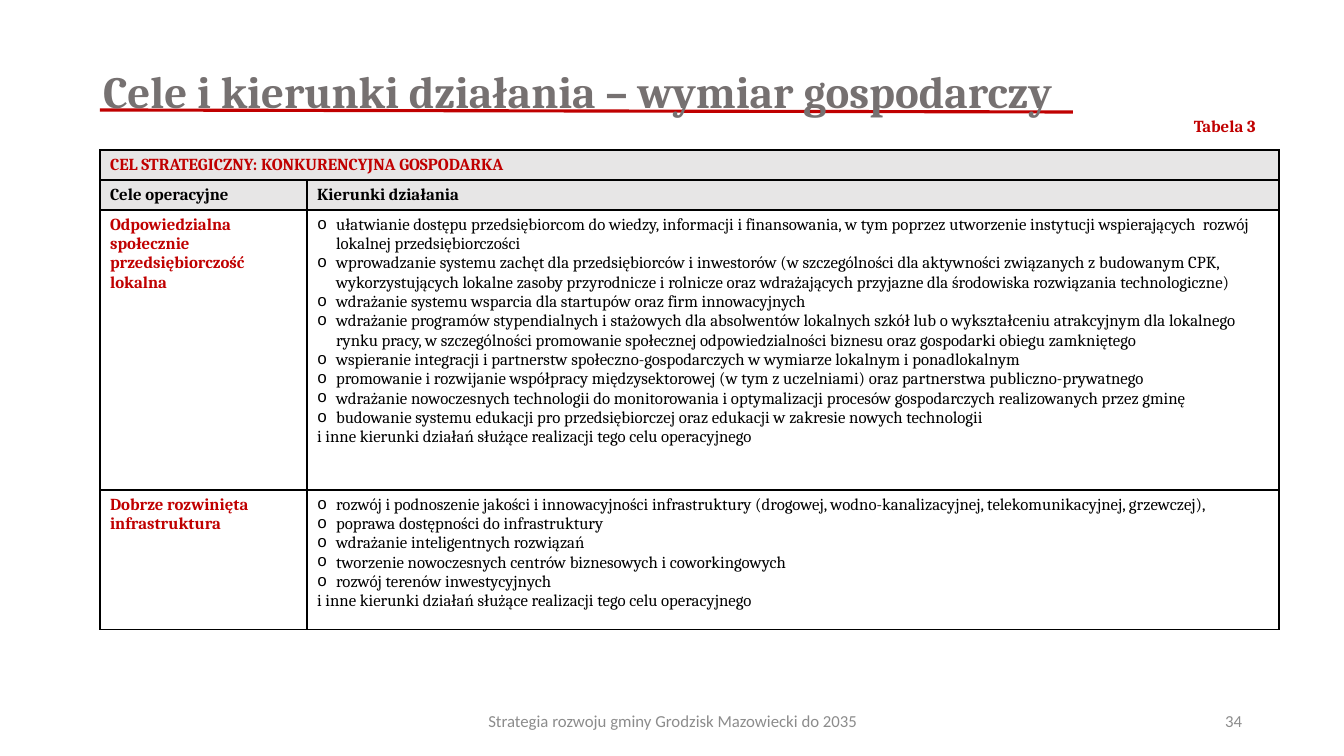
"""Build the slide with the table of economic goals and directions of action."""
from dataclasses import dataclass

from lxml import etree
from pptx import Presentation
from pptx.dml.color import RGBColor
from pptx.enum.shapes import MSO_CONNECTOR as Connector
from pptx.enum.text import MSO_ANCHOR as Anchor, PP_ALIGN as Align
from pptx.oxml import parse_xml
from pptx.oxml.ns import nsdecls, qn
from pptx.util import Pt

PX = 914400 / 100.8


@dataclass(frozen=True)
class Theme:
    red: str = "C00000"
    black: str = "000000"
    title_gray: str = "767171"
    footer_gray: str = "8C8C8C"
    header_fill: str = "E7E6E6"
    serif: str = "Cambria"
    sans: str = "Calibri"
    title_size: int = 32
    text_size: int = 12
    rule_width: float = 2.25
    border_width: int = 1


theme = Theme()


def px(*lengths):
    return [round(length * PX) for length in lengths]


def add_text(para, text, color, bold=False, size=theme.text_size, face=theme.serif):
    span = para.add_run()
    span.text = text
    span.font.name = face
    span.font.size = Pt(size)
    span.font.bold = bold
    span.font.color.rgb = RGBColor.from_string(color)


deck = Presentation()
deck.slide_width, deck.slide_height = px(1344, 756)
page = deck.slides.add_slide(deck.slide_layouts[5])

title = page.shapes.title
title.left, title.top, title.width, title.height = px(93, 28, 1159, 105)
title.text_frame.word_wrap = True
title.text_frame.vertical_anchor = Anchor.MIDDLE
title_para = title.text_frame.paragraphs[0]
title_para.alignment = Align.LEFT
title_para.line_spacing = Pt(52.8)
add_text(title_para, "Cele i kierunki działania – wymiar gospodarczy",
         theme.title_gray, True, theme.title_size)

rule = page.shapes.add_connector(Connector.STRAIGHT, *px(100, 110, 1073, 112))
rule.line.color.rgb = RGBColor.from_string(theme.red)
rule.line.width = Pt(theme.rule_width)
etree.SubElement(rule._element.spPr, qn("a:effectLst"))
page.shapes._spTree.insert(2, rule._element)

closing = "i inne kierunki działań służące realizacji tego celu operacyjnego"
goals = [
    ("Odpowiedzialna społecznie przedsiębiorczość lokalna", [
        "ułatwianie dostępu przedsiębiorcom do wiedzy, informacji i finansowania, w tym poprzez "
        "utworzenie instytucji wspierających  rozwój lokalnej przedsiębiorczości",
        "wprowadzanie systemu zachęt dla przedsiębiorców i inwestorów (w szczególności dla "
        "aktywności związanych z budowanym CPK, wykorzystujących lokalne zasoby przyrodnicze "
        "i rolnicze oraz wdrażających przyjazne dla środowiska rozwiązania technologiczne)",
        "wdrażanie systemu wsparcia dla startupów oraz firm innowacyjnych",
        "wdrażanie programów stypendialnych i stażowych dla absolwentów lokalnych szkół lub "
        "o wykształceniu atrakcyjnym dla lokalnego rynku pracy, w szczególności promowanie "
        "społecznej odpowiedzialności biznesu oraz gospodarki obiegu zamkniętego",
        "wspieranie integracji i partnerstw społeczno-gospodarczych w wymiarze lokalnym "
        "i ponadlokalnym",
        "promowanie i rozwijanie współpracy międzysektorowej (w tym z uczelniami) oraz "
        "partnerstwa publiczno-prywatnego",
        "wdrażanie nowoczesnych technologii do monitorowania i optymalizacji procesów "
        "gospodarczych realizowanych przez gminę",
        "budowanie systemu edukacji pro przedsiębiorczej oraz edukacji w zakresie nowych "
        "technologii",
    ]),
    ("Dobrze rozwinięta infrastruktura", [
        "rozwój i podnoszenie jakości i innowacyjności infrastruktury (drogowej, "
        "wodno-kanalizacyjnej, telekomunikacyjnej, grzewczej),",
        "poprawa dostępności do infrastruktury",
        "wdrażanie inteligentnych rozwiązań",
        "tworzenie nowoczesnych centrów biznesowych i coworkingowych",
        "rozwój terenów inwestycyjnych",
    ]),
]

table = page.shapes.add_table(4, 2, *px(100, 150, 1179, 480)).table
table.first_row = table.horz_banding = False
for column, width in zip(table.columns, px(207, 972)):
    column.width = width
for row, height in zip(table.rows, px(30, 30, 280, 140)):
    row.height = height
table.cell(0, 0).merge(table.cell(0, 1))

for row_number, row in enumerate(table.rows):
    for cell in row.cells:
        cell_format = cell._tc.get_or_add_tcPr()
        for side in "LRTB":
            cell_format.append(parse_xml(
                f'<a:ln{side} {nsdecls("a")} w="{Pt(theme.border_width)}"><a:solidFill>'
                f'<a:srgbClr val="{theme.black}"/></a:solidFill></a:ln{side}>'))
        if row_number < 2:
            cell.fill.solid()
            cell.fill.fore_color.rgb = RGBColor.from_string(theme.header_fill)
        else:
            cell.fill.background()

labels = [
    (0, 0, "CEL STRATEGICZNY: KONKURENCYJNA GOSPODARKA", theme.red),
    (1, 0, "Cele operacyjne", theme.black),
    (1, 1, "Kierunki działania", theme.black),
]
labels += [(number, 0, goal, theme.red) for number, (goal, _) in enumerate(goals, 2)]
for row_number, column_number, text, color in labels:
    frame = table.cell(row_number, column_number).text_frame
    add_text(frame.paragraphs[0], text, color, True)

indent, = px(19)
for row_number, (_, actions) in enumerate(goals, 2):
    frame = table.cell(row_number, 1).text_frame
    for number, action in enumerate(actions):
        para = frame.add_paragraph() if number else frame.paragraphs[0]
        para_format = para._p.get_or_add_pPr()
        para_format.set("marL", str(indent))
        para_format.set("indent", str(-indent))
        etree.SubElement(para_format, qn("a:buFont"), typeface="Courier New")
        etree.SubElement(para_format, qn("a:buChar"), char="o")
        add_text(para, action, theme.black)
    add_text(frame.add_paragraph(), closing, theme.black)

notes = [
    ((446, 701, 454, 40), "Strategia rozwoju gminy Grodzisk Mazowiecki do 2035",
     Align.CENTER, Anchor.MIDDLE, theme.footer_gray, False, theme.sans),
    ((950, 701, 302, 40), "34",
     Align.RIGHT, Anchor.MIDDLE, theme.footer_gray, False, theme.sans),
    ((1184, 111, 160, 30), "Tabela 3",
     Align.LEFT, Anchor.TOP, theme.red, True, theme.serif),
]
for place, text, align, anchor, color, bold, face in notes:
    box = page.shapes.add_textbox(*px(*place))
    box.text_frame.word_wrap = True
    box.text_frame.vertical_anchor = anchor
    para = box.text_frame.paragraphs[0]
    para.alignment = align
    add_text(para, text, color, bold, face=face)

deck.save("out.pptx")
